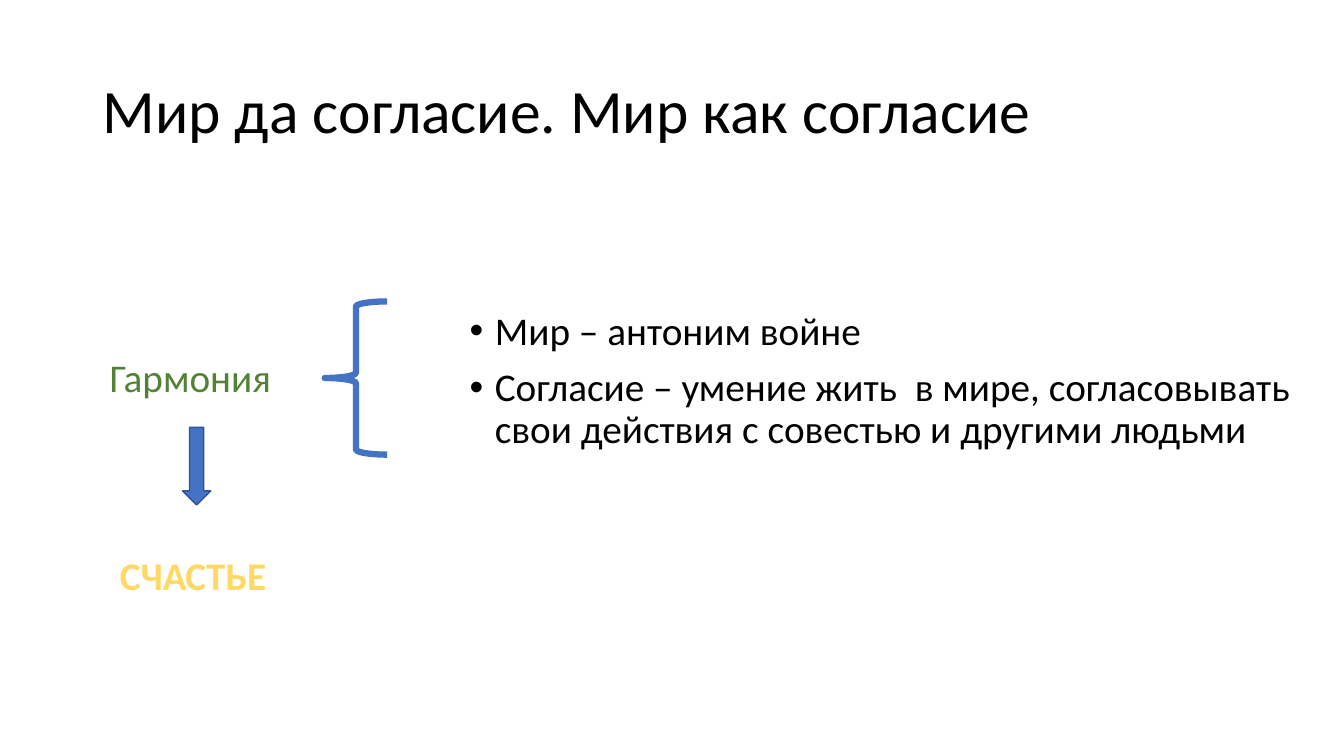
import pptx
import pptx.dml.color
import pptx.enum.shapes
import pptx.enum.text
import pptx.oxml
import pptx.oxml.ns
import pptx.util
from pptx.util import Inches

FONT = "Calibri"
BLACK, BLUE, DARK_BLUE, GREEN, GOLD = "000000", "4472C4", "325491", "548235", "FFD966"

TITLE = "Мир да согласие. Мир как согласие"
MEANINGS = [
    "Мир – антоним войне",
    "Согласие – умение жить  в мире, согласовывать свои действия с совестью и другими людьми",
]
# text, left, top, colour, bold
KEYWORDS = [
    ("Гармония", 0.99, 3.46, GREEN, False),
    ("СЧАСТЬЕ", 1.09, 5.42, GOLD, True),
]
KEYWORD_SIZE = (2.34, 0.57)

SHADOW = (
    '<a:effectLst %s><a:outerShdw blurRad="50800" dist="38100" dir="2700000" algn="tl">'
    '<a:srgbClr val="000000"><a:alpha val="40000"/></a:srgbClr></a:outerShdw></a:effectLst>'
    % pptx.oxml.ns.nsdecls("a")
)


def color(hex_string):
    return pptx.dml.color.RGBColor.from_string(hex_string)


def add_text(page, place, lines, size, ink, bold=False):
    box = page.shapes.add_textbox(*map(Inches, place))
    frame = box.text_frame
    frame.word_wrap = True
    frame.text = "\n".join(lines)
    for para in frame.paragraphs:
        for span in para.runs:
            span.font.name = FONT
            span.font.size = pptx.util.Pt(size)
            span.font.bold = bold
            span.font.color.rgb = color(ink)
    return frame


def add_bullet(para):
    properties = para._p.get_or_add_pPr()
    properties.set("marL", str(Inches(0.25)))
    properties.set("indent", str(-Inches(0.25)))
    for xml in ('<a:buFont %s typeface="Arial"/>', '<a:buChar %s char="•"/>'):
        properties.append(pptx.oxml.parse_xml(xml % pptx.oxml.ns.nsdecls("a")))


def add_text_shadow(span):
    fill = span.font._element.find(pptx.oxml.ns.qn("a:solidFill"))
    fill.addnext(pptx.oxml.parse_xml(SHADOW))


def add_figure(page, kind, place, line, width, fill=None):
    figure = page.shapes.add_shape(kind, *map(Inches, place))
    figure.shadow.inherit = False
    figure.line.color.rgb = color(line)
    figure.line.width = pptx.util.Pt(width)
    if fill:
        figure.fill.solid()
        figure.fill.fore_color.rgb = color(fill)
    else:
        figure.fill.background()


def main():
    deck = pptx.Presentation()
    deck.slide_width, deck.slide_height = Inches(13.33), Inches(7.5)
    page = deck.slides.add_slide(deck.slide_layouts[6])

    title = add_text(page, (0.92, 0.4, 11.5, 1.45), [TITLE], 44, BLACK)
    title.vertical_anchor = pptx.enum.text.MSO_ANCHOR.MIDDLE
    title.paragraphs[0].line_spacing = 0.9

    body = add_text(page, (4.56, 3.04, 8.49, 4.76), MEANINGS, 28, BLACK)
    for para in body.paragraphs:
        para.line_spacing = 0.9
        para.space_before = pptx.util.Pt(10)
        add_bullet(para)

    kinds = pptx.enum.shapes.MSO_SHAPE
    add_figure(page, kinds.LEFT_BRACE, (3.22, 2.99, 0.62, 1.52), BLUE, 4.5)
    add_figure(page, kinds.DOWN_ARROW, (1.81, 4.24, 0.28, 0.77), DARK_BLUE, 1, BLUE)

    for text, left, top, ink, bold in KEYWORDS:
        frame = add_text(page, (left, top, *KEYWORD_SIZE), [text], 28, ink, bold)
        add_text_shadow(frame.paragraphs[0].runs[0])

    deck.save("out.pptx")


if __name__ == "__main__":
    main()
